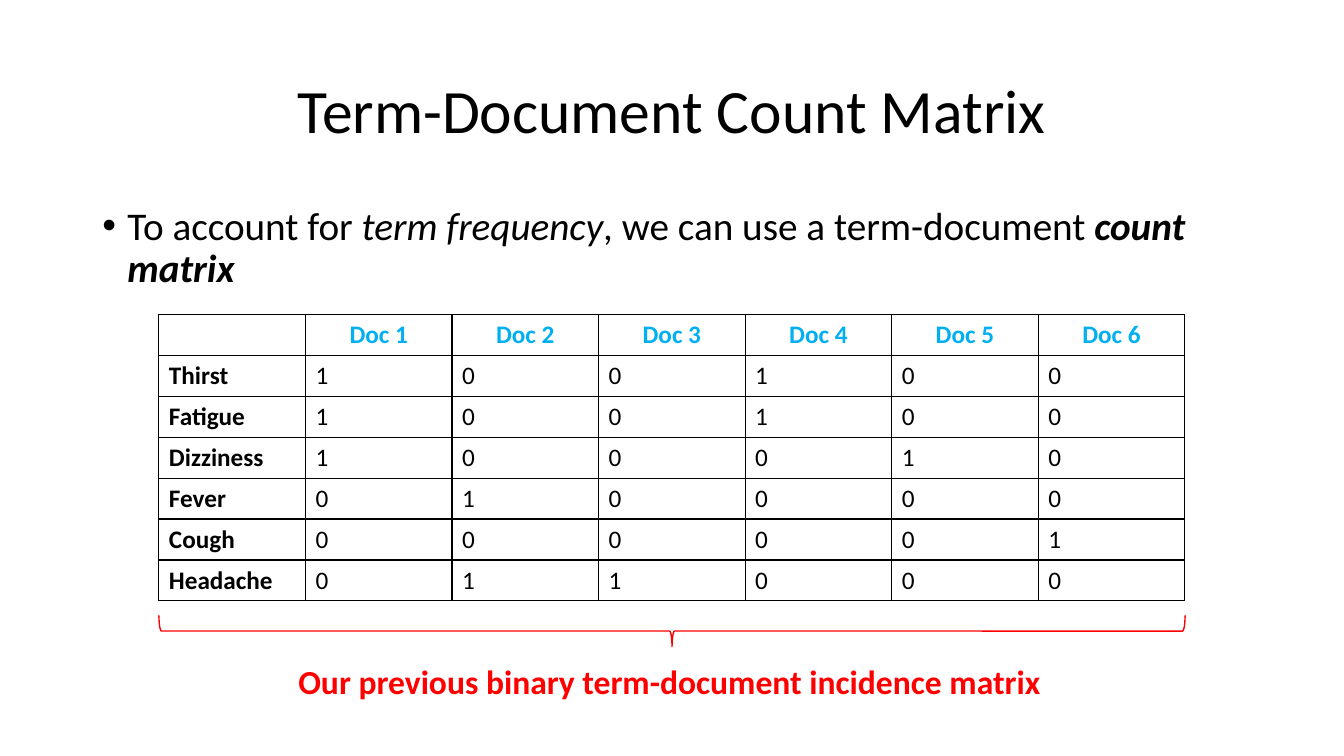
from lxml.etree import SubElement as Sub
from pptx import Presentation
from pptx.dml.color import RGBColor
from pptx.enum.shapes import MSO_SHAPE as Shape
from pptx.enum.text import MSO_ANCHOR as Anchor, PP_ALIGN as Align
from pptx.oxml.ns import qn
from pptx.util import Pt

BLACK = RGBColor(0x00, 0x00, 0x00)
BLUE = RGBColor(0x00, 0xB0, 0xF0)
RED = RGBColor(0xFF, 0x00, 0x00)

TERMS = {
    "Thirst": "100100",
    "Fatigue": "100100",
    "Dizziness": "100010",
    "Fever": "010000",
    "Cough": "000001",
    "Headache": "011000",
}


def write(para, text, size=18, color=BLACK, bold=False, italic=False,
          face="Calibri"):
    """Add one formatted run to a paragraph."""
    run = para.add_run()
    run.text = text
    font = run.font
    font.name, font.size = face, Pt(size)
    font.bold, font.italic = bold, italic
    font.color.rgb = color


class Deck:
    """Holds the line style and the current slide."""

    def __init__(self, width, height, line=1):
        self.file = Presentation()
        self.file.slide_width, self.file.slide_height = Pt(width), Pt(height)
        self.line = line
        self.slide = self.file.slides.add_slide(self.file.slide_layouts[6])

    def text(self, left, top, width, height, align=Align.LEFT,
             anchor=Anchor.TOP, space=1.0):
        box = self.slide.shapes.add_textbox(
            Pt(left), Pt(top), Pt(width), Pt(height))
        frame = box.text_frame
        frame.word_wrap = True
        frame.vertical_anchor = anchor
        para = frame.paragraphs[0]
        para.alignment, para.line_spacing = align, space
        return para

    def bullet(self, para, indent=18):
        props = para._p.get_or_add_pPr()
        props.set("marL", str(Pt(indent)))
        props.set("indent", str(-Pt(indent)))
        Sub(props, qn("a:buFont"), typeface="Arial")
        Sub(props, qn("a:buChar"), char="•")

    def border(self, cell):
        props = cell._tc.get_or_add_tcPr()
        for spot, side in enumerate(("lnL", "lnR", "lnT", "lnB")):
            edge = props.makeelement(qn("a:" + side), {"w": str(Pt(self.line))})
            fill = Sub(edge, qn("a:solidFill"))
            Sub(fill, qn("a:srgbClr"), val=str(BLACK))
            props.insert(spot, edge)

    def table(self, left, top, wide, high, rows):
        count, span = len(rows), len(rows[0])
        grid = self.slide.shapes.add_table(
            count, span, Pt(left), Pt(top),
            Pt(wide * span), Pt(high * count)).table
        grid.first_row = grid.horz_banding = False
        for col in grid.columns:
            col.width = Pt(wide)
        for r, row in enumerate(rows):
            grid.rows[r].height = Pt(high)
            for c, value in enumerate(row):
                cell = grid.cell(r, c)
                cell.fill.background()
                self.border(cell)
                if not value:
                    continue
                para = cell.text_frame.paragraphs[0]
                para.alignment = Align.LEFT if r else Align.CENTER
                write(para, value, color=BLACK if r else BLUE,
                      bold=r == 0 or c == 0)

    def brace(self, left, top, width, height, color):
        # Place the upright shape so that a quarter turn fills the given box
        shape = self.slide.shapes.add_shape(
            Shape.RIGHT_BRACE,
            Pt(left + (width - height) / 2), Pt(top + (height - width) / 2),
            Pt(height), Pt(width))
        shape.rotation = 90
        shape.shadow.inherit = False
        shape.fill.background()
        shape.line.color.rgb = color
        shape.line.width = Pt(self.line)


def main():
    deck = Deck(960, 540)

    # Title
    title = deck.text(66, 28.8, 828, 104.4, align=Align.CENTER,
                      anchor=Anchor.MIDDLE, space=0.9)
    write(title, "Term-Document Count Matrix", size=44)

    # Bullet
    point = deck.text(66, 144, 844, 367, space=0.9)
    deck.bullet(point)
    write(point, "To account for ", size=28)
    write(point, "term frequency", size=28, italic=True)
    write(point, ", we can use a term-document ", size=28)
    write(point, "count matrix", size=28, bold=True, italic=True)

    # Matrix
    head = [""] + [f"Doc {n}" for n in range(1, 7)]
    rows = [head] + [[term, *marks] for term, marks in TERMS.items()]
    deck.table(113.5, 224.8, 104.7, 29.2, rows)

    # Brace and caption
    deck.brace(113.5, 439.6, 733, 22.3, RED)
    label = deck.text(206, 468.7, 564.5, 36)
    write(label, "Our previous binary term-document incidence matrix",
          size=24, color=RED, bold=True)

    deck.file.save("out.pptx")


if __name__ == "__main__":
    main()
